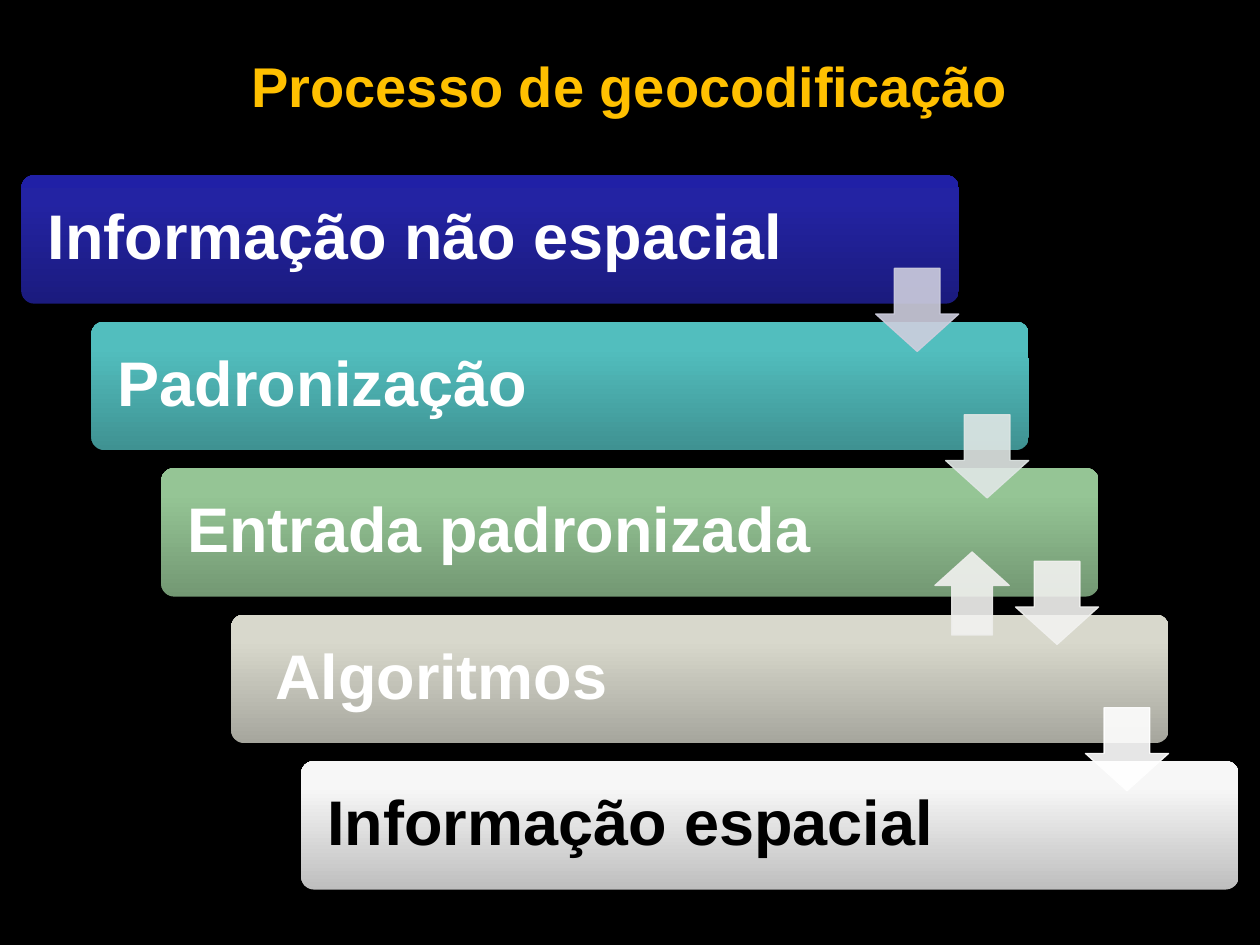
from copy import deepcopy
from dataclasses import dataclass

from pptx import Presentation
from pptx.dml.color import RGBColor
from pptx.enum.shapes import MSO_SHAPE as Preset
from pptx.enum.text import MSO_ANCHOR as Anchor, PP_ALIGN as Align
from pptx.oxml.ns import qn
from pptx.shapes.autoshape import Shape
from pptx.slide import Slide
from pptx.util import Inches, Pt
from lxml.etree import SubElement

WIDTH, HEIGHT = 10, 7.5
BAR_LEFT, BAR_TOP = 0.17, 1.39
BAR_WIDTH, BAR_HEIGHT = 0.744 * WIDTH, 0.136 * HEIGHT
COLUMN, ROW = 0.0555 * WIDTH, 0.155 * HEIGHT
ARROW = 0.066 * WIDTH
ARROW_DROP = 0.74
STOPS = (0, 80, 100)


@dataclass(frozen=True)
class Step:
    """One bar of the staircase, with its gradient from bottom to top."""
    label: str
    gradient: tuple[str, str, str]
    ink: str = "FFFFFF"
    indent: float = 0


@dataclass(frozen=True)
class Arrow:
    """One block arrow between two steps."""
    left: float
    top: float
    fill: str
    outline: str
    width: float = ARROW
    rotation: int = 0


STEPS = (
    Step("Informação não espacial", ("1B1B7E", "2323A3", "2020A6")),
    Step("Padronização", ("3F9292", "52BEBE", "50C1C1")),
    Step("Entrada padronizada", ("739873", "95C595", "95C795")),
    Step("Algoritmos", ("A6A69D", "D8D8CC", "D9D9CD"), indent=0.14),
    Step("Informação espacial", ("BEBEBE", "F7F7F7", "F8F8F8"), ink="000000"),
)
DESCENT_COLORS = ("CECEDE", "E0E7E5", "F2F2F0", "FFFFFF")
RETURN_ARROW = Arrow(7.42, 4.38, "F2F2F0", "EDEDEB", width=0.59, rotation=180)


def color(value: str) -> RGBColor:
    """Turn a hex string into a colour."""
    return RGBColor.from_string(value)


def write(holder: Shape, text: str, size: int, ink: str, align: Align) -> None:
    """Write one bold, vertically centred line in a shape."""
    frame = holder.text_frame
    frame.word_wrap = True
    frame.vertical_anchor = Anchor.MIDDLE
    paragraph = frame.paragraphs[0]
    paragraph.alignment = align
    run = paragraph.add_run()
    run.text = text
    run.font.name, run.font.size, run.font.bold = "Arial", Pt(size), True
    run.font.color.rgb = color(ink)


def paint_gradient(bar: Shape, gradient: tuple[str, str, str]) -> None:
    """Fill a bar with three stops, from bottom to top."""
    bar.fill.gradient()
    bar.fill.gradient_angle = 90
    stop_list = next(bar._element.spPr.iter(qn("a:gsLst")))
    stop_list.append(deepcopy(stop_list[-1]))
    for stop, position, value in zip(bar.fill.gradient_stops, STOPS, gradient):
        stop.position = position / 100
        stop.color.rgb = color(value)


def draw_step(slide: Slide, step: Step, index: int) -> None:
    """Draw the bar of a step, one column right and one row down each time."""
    bar = slide.shapes.add_shape(
        Preset.ROUNDED_RECTANGLE,
        Inches(BAR_LEFT + index * COLUMN), Inches(BAR_TOP + index * ROW),
        Inches(BAR_WIDTH), Inches(BAR_HEIGHT))
    bar.adjustments[0] = 0.1
    bar.shadow.inherit = False
    bar.line.fill.background()
    paint_gradient(bar, step.gradient)
    bar.text_frame.margin_left = Inches(0.18 + step.indent)
    write(bar, step.label, 36, step.ink, Align.LEFT)
    bar.text_frame.paragraphs[0].line_spacing = 0.9


def draw_arrow(slide: Slide, arrow: Arrow) -> None:
    """Draw a slightly transparent block arrow."""
    block = slide.shapes.add_shape(
        Preset.DOWN_ARROW, Inches(arrow.left), Inches(arrow.top),
        Inches(arrow.width), Inches(ARROW))
    block.adjustments[0], block.adjustments[1] = 0.55, 0.45
    block.rotation = arrow.rotation
    block.shadow.inherit = False
    block.fill.solid()
    block.fill.fore_color.rgb = color(arrow.fill)
    block.line.color.rgb = color(arrow.outline)
    block.line.width = Pt(0.75)
    for tint in block._element.spPr.iter(qn("a:srgbClr")):
        SubElement(tint, qn("a:alpha"), val="90000")


def main() -> None:
    """Build the slide and save it."""
    deck = Presentation()
    deck.slide_width, deck.slide_height = Inches(WIDTH), Inches(HEIGHT)
    slide = deck.slides.add_slide(deck.slide_layouts[6])
    slide.background.fill.solid()
    slide.background.fill.fore_color.rgb = color("000000")

    title = slide.shapes.add_textbox(
        Inches(0.05 * WIDTH), Inches(0.05), Inches(0.9 * WIDTH), Inches(1.25))
    write(title, "Processo de geocodificação", 32, "FFC000", Align.CENTER)

    for index, step in enumerate(STEPS):
        draw_step(slide, step, index)
    for index, tint in enumerate(DESCENT_COLORS):
        left = BAR_LEFT + BAR_WIDTH - ARROW + index * COLUMN
        draw_arrow(slide, Arrow(left, BAR_TOP + ARROW_DROP + index * ROW, tint, tint))
    draw_arrow(slide, RETURN_ARROW)

    deck.save("out.pptx")


if __name__ == "__main__":
    main()
